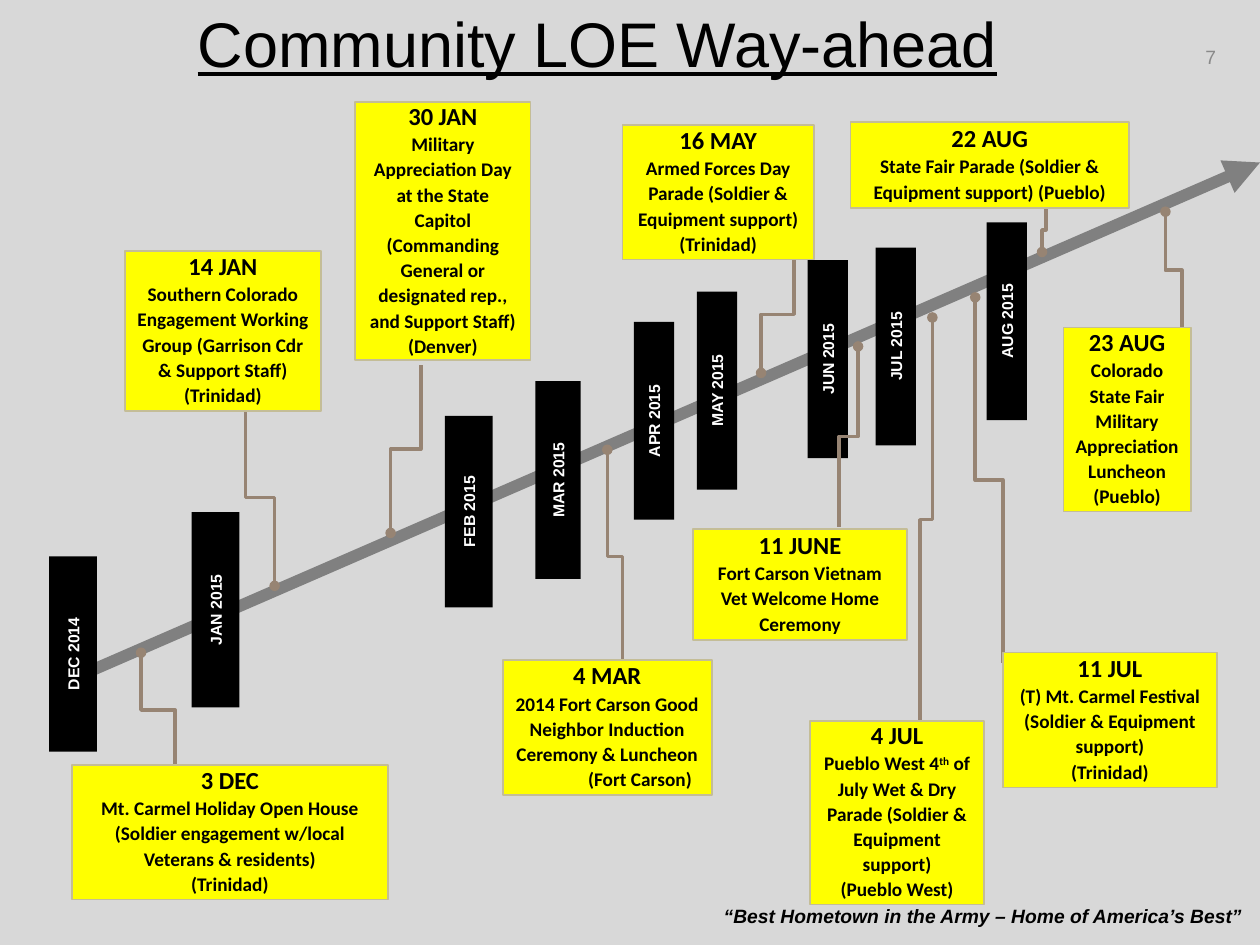
from pptx import Presentation
from pptx.dml.color import RGBColor
from pptx.enum.shapes import MSO_CONNECTOR, MSO_SHAPE
from pptx.enum.text import MSO_ANCHOR, MSO_AUTO_SIZE, PP_ALIGN
from pptx.oxml.ns import qn
from pptx.util import Inches, Pt
from lxml import etree

BACKGROUND = RGBColor(0xD8, 0xD8, 0xD8)
BLACK = RGBColor(0, 0, 0)
WHITE = RGBColor(0xFF, 0xFF, 0xFF)
YELLOW = RGBColor(0xFF, 0xFF, 0)
CARD_BORDER = RGBColor(0xC4, 0xBD, 0x97)
LEADER = RGBColor(0x97, 0x84, 0x73)
TIMELINE = RGBColor(0x80, 0x80, 0x80)
NUMBER_GRAY = RGBColor(0x89, 0x89, 0x89)

# label, centre x, centre y, length, thickness
MONTHS = [
    ("DEC 2014", 0.58, 5.19, 1.55, 0.38),
    ("JAN 2015", 1.71, 4.84, 1.55, 0.38),
    ("FEB 2015", 3.72, 4.06, 1.52, 0.38),
    ("MAR 2015", 4.43, 3.81, 1.57, 0.36),
    ("APR 2015", 5.19, 3.34, 1.57, 0.32),
    ("MAY 2015", 5.69, 3.1, 1.57, 0.32),
    ("JUN 2015", 6.57, 2.85, 1.57, 0.32),
    ("JUL 2015", 7.11, 2.75, 1.57, 0.32),
    ("AUG 2015", 7.99, 2.55, 1.57, 0.32),
]

# date, description paragraphs, card box, leader start, leader end.
# Text between ^ marks is superscript.
EVENTS = [
    ("3 DEC", ["Mt. Carmel Holiday Open House (Soldier engagement w/local "
               "Veterans & residents)", "(Trinidad)"],
     (0.57, 6.07, 2.51, 1.07), (1.39, 6.09), (1.12, 5.18)),
    ("14 JAN", ["Southern Colorado Engagement Working Group "
                "(Garrison Cdr & Support Staff) (Trinidad)"],
     (0.99, 1.99, 1.56, 1.27), (1.95, 3.25), (2.18, 4.65)),
    ("30 JAN", ["Military Appreciation Day at the State Capitol (Commanding "
                "General or designated rep., and Support Staff)", "(Denver)"],
     (2.82, 0.81, 1.39, 2.05), (3.34, 2.9), (3.1, 4.23)),
    ("4 MAR", ["2014 Fort Carson Good Neighbor Induction Ceremony & Luncheon",
               "(Fort Carson)"],
     (3.99, 5.24, 1.66, 1.07), (4.94, 5.26), (4.82, 3.57)),
    ("16 MAY", ["Armed Forces Day Parade (Soldier & Equipment support) "
                "(Trinidad)"],
     (4.94, 0.99, 1.52, 1.07), (6.3, 2.03), (6.04, 2.96)),
    ("11 JUNE", ["Fort Carson Vietnam Vet Welcome Home Ceremony"],
     (5.5, 4.2, 1.7, 0.88), (6.66, 4.18), (6.81, 2.75)),
    ("4 JUL", ["Pueblo West 4^th^ of July Wet & Dry Parade (Soldier & "
               "Equipment support)", "(Pueblo West)"],
     (6.43, 5.72, 1.38, 1.46), (7.3, 5.73), (7.4, 2.52)),
    ("11 JUL", ["(T) Mt. Carmel Festival (Soldier & Equipment support)",
                "(Trinidad)"],
     (7.96, 5.18, 1.7, 1.07), (7.96, 5.26), (7.74, 2.36)),
    ("22 AUG", ["State Fair Parade (Soldier & Equipment support) (Pueblo)"],
     (6.75, 0.97, 2.21, 0.68), (8.3, 1.65), (8.27, 2)),
    ("23 AUG", ["Colorado State Fair Military Appreciation Luncheon (Pueblo)"],
     (8.44, 2.6, 1.01, 1.46), (9.38, 2.61), (9.25, 1.68)),
]
INDENTED_PLACES = {"(Fort Carson)": Inches(0.52)}


def format_font(font, name, size, color, bold=False):
    font.name, font.size, font.bold = name, Pt(size), bold
    font.color.rgb = color


def set_frame(frame, anchor):
    frame.margin_left = frame.margin_right = Inches(0.09)
    frame.margin_top = frame.margin_bottom = Inches(0.04)
    frame.vertical_anchor = anchor
    frame.word_wrap = True


def add_title(slide, text):
    title = slide.shapes.title
    title.left, title.top = Inches(1.14), Inches(0.06)
    title.width, title.height = Inches(7.2), Inches(0.64)
    frame = title.text_frame
    frame.text = text
    set_frame(frame, MSO_ANCHOR.TOP)
    frame.auto_size = MSO_AUTO_SIZE.NONE
    paragraph = frame.paragraphs[0]
    paragraph.alignment = PP_ALIGN.CENTER
    paragraph.line_spacing = 0.9
    font = paragraph.runs[0].font
    format_font(font, "Arial", 36, BLACK)
    font.underline = True


def add_label(slide, text, box, color, bold=False, italic=False):
    label = slide.shapes.add_textbox(*map(Inches, box))
    frame = label.text_frame
    frame.text = text
    frame.vertical_anchor = MSO_ANCHOR.MIDDLE
    paragraph = frame.paragraphs[0]
    paragraph.alignment = PP_ALIGN.RIGHT
    font = paragraph.runs[0].font
    format_font(font, "Arial", 11, color, bold)
    font.italic = italic


def add_rectangle(slide, box, fill):
    shape = slide.shapes.add_shape(MSO_SHAPE.RECTANGLE, *map(Inches, box))
    shape.shadow.inherit = False
    shape.fill.solid()
    shape.fill.fore_color.rgb = fill
    shape.line.fill.background()
    set_frame(shape.text_frame, MSO_ANCHOR.MIDDLE)
    return shape


def add_line(slide, kind, start, end, color, width, tail):
    connector = slide.shapes.add_connector(kind, *map(Inches, start + end))
    connector.line.color.rgb = color
    connector.line.width = Pt(width)
    properties = connector._element.spPr
    line = properties.find(qn("a:ln"))
    etree.SubElement(line, qn("a:tailEnd"), type=tail)
    etree.SubElement(properties, qn("a:effectLst"))
    return connector


def add_leader(slide, start, end):
    """Add an elbow that leaves vertically: a horizontal one turned by 90°."""
    (x1, y1), (x2, y2) = start, end
    center_x, center_y = (x1 + x2) / 2, (y1 + y2) / 2
    half_x, half_y = (x2 - x1) / 2, (y2 - y1) / 2
    leader = add_line(slide, MSO_CONNECTOR.ELBOW,
                      (center_x - half_y, center_y + half_x),
                      (center_x + half_y, center_y - half_x),
                      LEADER, 2, "oval")
    leader._element.spPr.find(qn("a:xfrm")).set("rot", "5400000")


def add_month(slide, label, center_x, center_y, length, thickness):
    box = (center_x - length / 2, center_y - thickness / 2, length, thickness)
    month = add_rectangle(slide, box, BLACK)
    month.rotation = 270
    month.text_frame.text = label
    paragraph = month.text_frame.paragraphs[0]
    paragraph.alignment = PP_ALIGN.CENTER
    format_font(paragraph.runs[0].font, "Arial", 9, WHITE, True)


def add_card(slide, date, description, box):
    card = add_rectangle(slide, box, YELLOW)
    card.line.color.rgb = CARD_BORDER
    card.line.width = Pt(1)
    frame = card.text_frame
    frame.auto_size = MSO_AUTO_SIZE.SHAPE_TO_FIT_TEXT
    for index, text in enumerate([date] + description):
        paragraph = frame.add_paragraph() if index else frame.paragraphs[0]
        paragraph.alignment = PP_ALIGN.CENTER
        paragraph.line_spacing = Pt(14.4)
        if text in INDENTED_PLACES:
            paragraph._p.get_or_add_pPr().set("marL", str(INDENTED_PLACES[text]))
        for part, content in enumerate(text.split("^")):
            run = paragraph.add_run()
            run.text = content
            format_font(run.font, "Calibri", 11 if index else 14, BLACK, True)
            if part % 2:
                run.font._element.set("baseline", "30000")


def main():
    presentation = Presentation()
    presentation.slide_width, presentation.slide_height = Inches(10), Inches(7.5)
    slide = presentation.slides.add_slide(presentation.slide_layouts[5])
    slide.background.fill.solid()
    slide.background.fill.fore_color.rgb = BACKGROUND

    add_title(slide, "Community LOE Way-ahead")
    add_label(slide, "7", (9.08, 0.25, 0.67, 0.4), NUMBER_GRAY)
    add_label(slide, "“Best Hometown in the Army – Home of America’s Best”",
              (5.61, 7.12, 4.35, 0.29), BLACK, bold=True, italic=True)
    add_line(slide, MSO_CONNECTOR.STRAIGHT, (0.43, 5.45), (10, 1.29),
             TIMELINE, 6.75, "triangle")
    for month in MONTHS:
        add_month(slide, *month)
    for _, _, _, start, end in EVENTS:
        add_leader(slide, start, end)
    for date, description, box, _, _ in EVENTS:
        add_card(slide, date, description, box)
    presentation.save("out.pptx")


if __name__ == "__main__":
    main()
